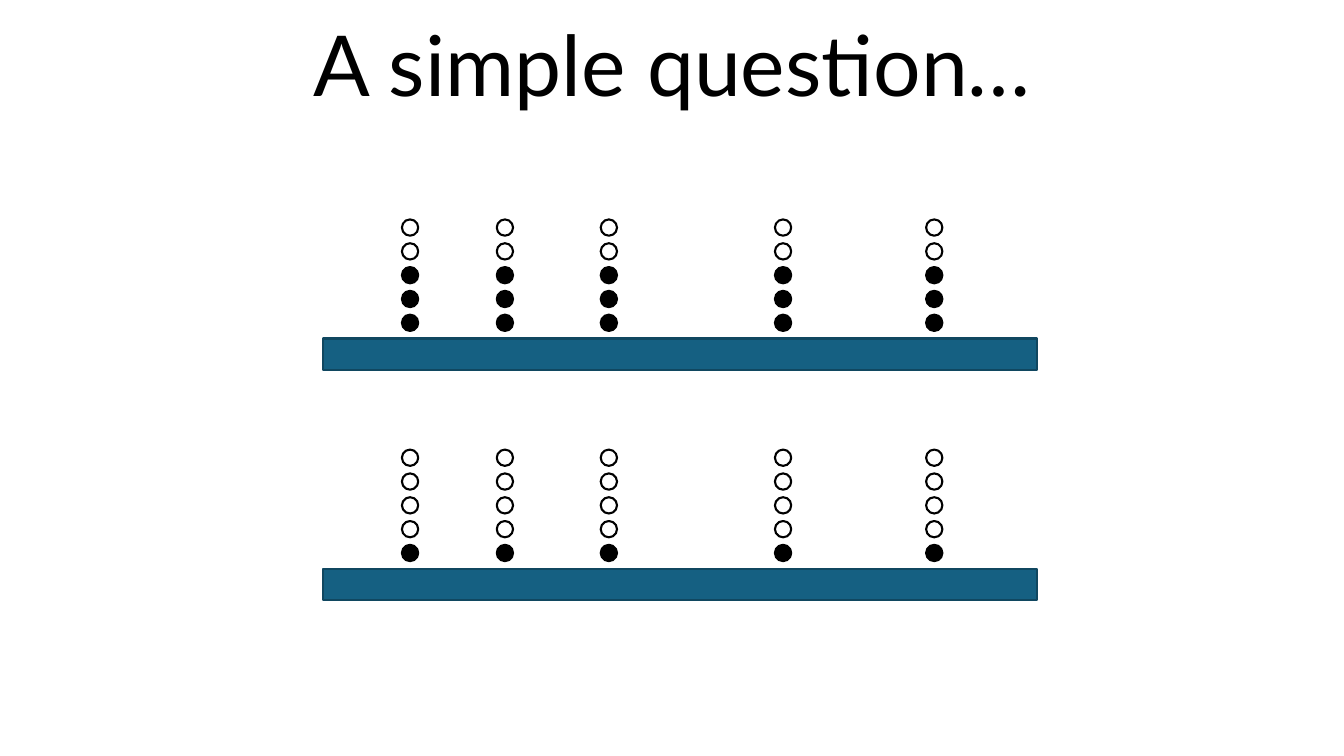
from pptx import Presentation
from pptx.dml.color import RGBColor
from pptx.enum.shapes import MSO_SHAPE as Preset
from pptx.enum.text import MSO_ANCHOR as Anchor, PP_ALIGN as Align
from pptx.util import Cm, Pt

TITLE = "A simple question…"
BLACK, WHITE = "000000", "FFFFFF"
BAR_FILL, BAR_LINE = "156082", "104760"

# Lengths in centimetres
BAR_LEFT, BAR_WIDTH, BAR_HEIGHT = 8.13, 18.01, 0.79
STACK_LEFTS = [10.13, 12.52, 15.14, 19.53, 23.34]
DOT_SIZE, DOT_STEP, DOTS_PER_STACK = 0.41, 0.6, 5
ROWS = [
    {"bar_top": 8.53, "filled": 3},
    {"bar_top": 14.33, "filled": 1},
]


def color(value):
    return RGBColor.from_string(value)


def write_text(box, text, size, font, ink, align, spacing):
    box.text_frame.word_wrap = True
    box.text_frame.vertical_anchor = Anchor.MIDDLE
    para = box.text_frame.paragraphs[0]
    para.alignment = align
    para.line_spacing = spacing
    span = para.add_run()
    span.text = text
    span.font.size = Pt(size)
    span.font.name = font
    span.font.color.rgb = color(ink)


def add_outlined(group, preset, left, top, width, height, fill, line):
    shape = group.shapes.add_shape(preset, Cm(left), Cm(top), Cm(width), Cm(height))
    shape.shadow.inherit = False
    shape.fill.solid()
    shape.fill.fore_color.rgb = color(fill)
    shape.line.color.rgb = color(line)
    shape.line.width = Pt(1.5)


def add_row(page, bar_top, filled):
    """Draw a bar with stacks of dots above it, the lowest ones filled."""
    group = page.shapes.add_group_shape()
    add_outlined(group, Preset.RECTANGLE, BAR_LEFT, bar_top, BAR_WIDTH, BAR_HEIGHT,
                 BAR_FILL, BAR_LINE)
    for left in STACK_LEFTS:
        for level in range(DOTS_PER_STACK):
            top = bar_top - (level + 1) * DOT_STEP
            fill = BLACK if level < filled else WHITE
            add_outlined(group, Preset.OVAL, left, top, DOT_SIZE, DOT_SIZE, fill, BLACK)


def main():
    deck = Presentation()
    deck.slide_width, deck.slide_height = Cm(33.87), Cm(19.05)
    page = deck.slides.add_slide(deck.slide_layouts[5])
    title = page.shapes.title
    title.left, title.top, title.width, title.height = Cm(5.51), Cm(0.15), Cm(22.86), Cm(3.18)
    write_text(title, TITLE, size=60, font="Lato", ink=BLACK, align=Align.CENTER, spacing=0.9)
    for row in ROWS:
        add_row(page, **row)
    deck.save("out.pptx")


if __name__ == "__main__":
    main()
